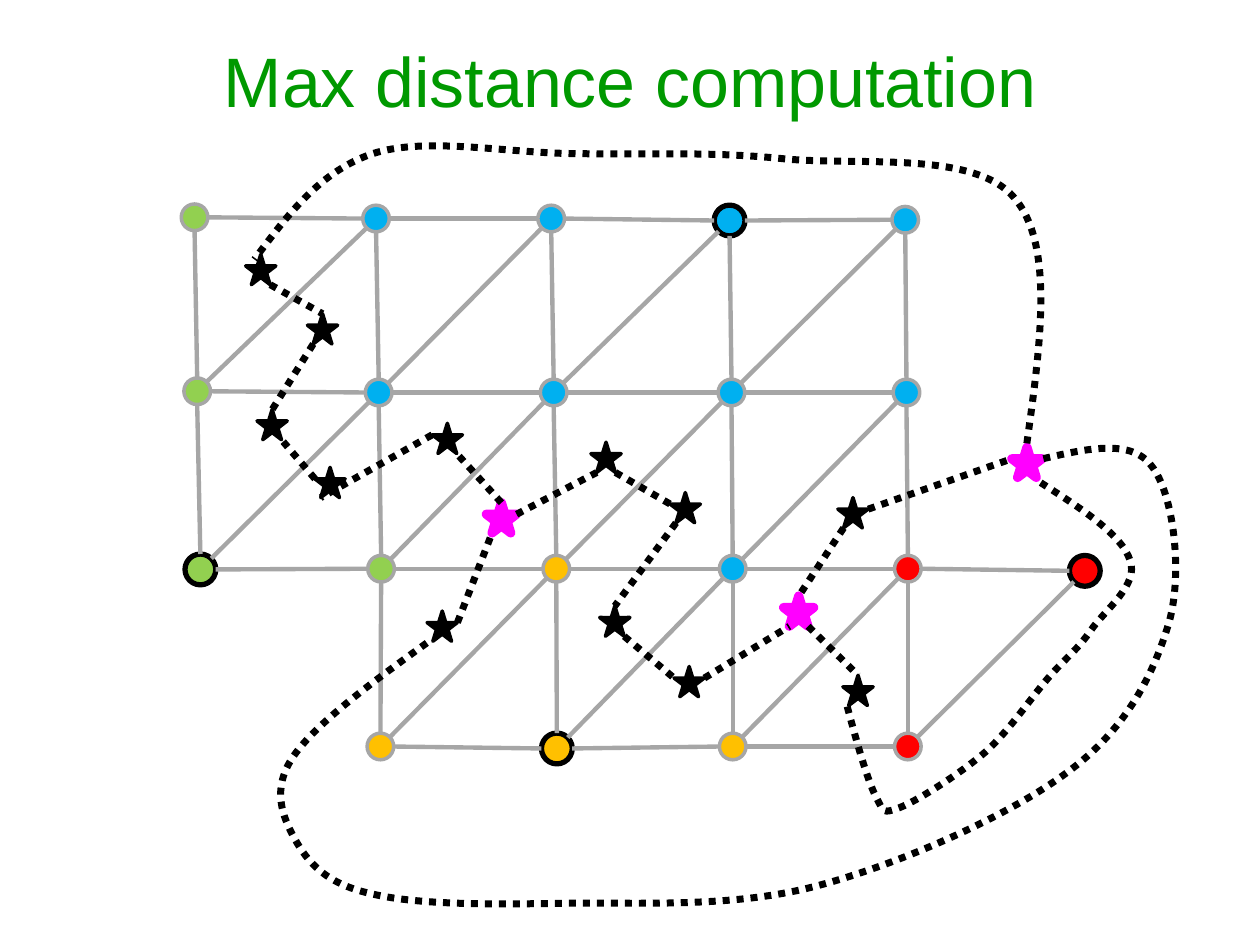
from lxml import etree
from pptx import Presentation
from pptx import util as u
from pptx.dml.color import RGBColor
from pptx.enum import dml, shapes, text
from pptx.oxml.ns import qn

BLACK = RGBColor(0x00, 0x00, 0x00)
GRAY = RGBColor(0xA6, 0xA6, 0xA6)
BLUE = RGBColor(0x00, 0xB0, 0xF0)
LIME = RGBColor(0x92, 0xD0, 0x50)
ORANGE = RGBColor(0xFF, 0xC0, 0x00)
RED = RGBColor(0xFF, 0x00, 0x00)
MAGENTA = RGBColor(0xFF, 0x00, 0xFF)
TITLE_GREEN = RGBColor(0x00, 0x99, 0x00)

STAR_SIZE = 17.3
NODE_RADIUS = 7.6
SEED_RADIUS = 8.8

# Mesh nodes by (row, column): centre x, centre y, colour
NODES = {
    (0, 0): (111.2, 124.2, LIME), (0, 1): (214.9, 124.9, BLUE),
    (0, 2): (315, 124.9, BLUE), (0, 3): (416.9, 126, BLUE),
    (0, 4): (517.3, 125.6, BLUE),
    (1, 0): (112.7, 223.6, LIME), (1, 1): (216.4, 224.3, BLUE),
    (1, 2): (316.4, 224.3, BLUE), (1, 3): (418, 224.3, BLUE),
    (1, 4): (518, 224.3, BLUE),
    (2, 0): (114.5, 325.4, LIME), (2, 1): (217.8, 325, LIME),
    (2, 2): (317.9, 325, ORANGE), (2, 3): (418.7, 325, BLUE),
    (2, 4): (518.8, 325, RED), (2, 5): (619.9, 326.2, RED),
    (3, 1): (217.4, 426.6, ORANGE), (3, 2): (318.2, 427.7, ORANGE),
    (3, 3): (418.7, 426.6, ORANGE), (3, 4): (518.8, 426.6, RED),
}
SEEDS = {(0, 3), (2, 0), (2, 5), (3, 2)}
# Neighbour step (row, column) and how far the edge end sits from the centre, in radii
STEPS = {(0, 1): 1, (1, 0): 1, (1, -1): 0.71}

# Dual vertices: left, top
STARS = {
    "a": (140.4, 145.4), "b": (175.7, 179.3), "c": (146.9, 234),
    "d": (180, 267.1), "e": (247, 241.9), "f": (244.1, 349.2),
    "g": (337.7, 252.7), "h": (383, 281.5), "i": (342.7, 346.3),
    "k": (385.2, 380.9), "l": (478.8, 284.4), "m": (481.7, 385.9),
    "west": (277.9, 287.3), "south": (447.8, 340.6), "east": (578.2, 255.6),
}
JUNCTIONS = {"west", "south", "east"}
# Star tips as fractions of the star's size
TIPS = {"top": (0.5, 0), "left": (0, 0.38), "right": (1, 0.38),
        "foot_l": (0.19, 1), "foot_r": (0.81, 1)}
LINKS = [
    ("a", "foot_r", "b", "top"), ("b", "foot_l", "c", "top"),
    ("d", "left", "c", "foot_r"), ("e", "left", "d", "foot_l"),
    ("west", "top", "e", "foot_r"), ("f", "right", "west", "foot_l"),
    ("west", "right", "g", "foot_l"), ("g", "foot_r", "h", "left"),
    ("h", "foot_l", "i", "top"), ("i", "foot_r", "k", "left"),
    ("k", "right", "south", "foot_l"), ("l", "foot_l", "south", "top"),
    ("south", "foot_r", "m", "top"), ("l", "right", "east", "left"),
]

# Outer loops: start point, then two control points and an end point per segment
LOOPS = [
    [(594.7, 275.8),
     (618.5, 290.9), (641.5, 306), (645.8, 320.4),
     (650.9, 334.1), (631.4, 348.5), (623.5, 360),
     (615.6, 371.5), (609.1, 375.8), (599, 387.4),
     (589, 398.9), (576.7, 417.6), (563, 429.8),
     (548.6, 442.1), (524.9, 457.2), (514.1, 461.5),
     (504, 465.1), (505.4, 464.4), (500.4, 455),
     (495.4, 445), (489.6, 424.1), (483.8, 402.5)],
    [(596.2, 262.1),
     (621.4, 256.3), (646.6, 250.6), (658.1, 266.4),
     (670.3, 281.5), (676.1, 326.2), (668.2, 355),
     (659.5, 384.5), (644.4, 416.2), (609.8, 441.4),
     (576, 466.6), (512.6, 494.6), (464.4, 506.9),
     (416.2, 519.1), (362.2, 515.5), (320.4, 516.2),
     (277.9, 517), (236.9, 517), (211, 510.5),
     (185.8, 504.7), (175.7, 492.5), (168.5, 479.5),
     (161.3, 466.6), (154.8, 450.7), (167.8, 432),
     (180.7, 413.3), (213.1, 389.5), (246.2, 365.8)],
    [(586.8, 253.4),
     (594.7, 196.6), (602.6, 139.7), (579.6, 113),
     (556.6, 85.7), (488.9, 95), (447.1, 90.7),
     (405.4, 86.4), (368.6, 88.6), (329.8, 87.8),
     (290.9, 87.8), (244.1, 77.8), (213.1, 87.8),
     (182.9, 97.9), (164.2, 123.1), (145.4, 148.3)],
]


def style_line(line, color, width, dotted=False):
    line.color.rgb = color
    line.width = u.Pt(width)
    if dotted:
        line.dash_style = dml.MSO_LINE.ROUND_DOT


def add_title(page, title):
    box = page.shapes.add_textbox(u.Pt(54), u.Pt(0.7), u.Pt(612), u.Pt(90))
    frame = box.text_frame
    frame.word_wrap = True
    frame.vertical_anchor = text.MSO_ANCHOR.MIDDLE
    frame.text = title
    para = frame.paragraphs[0]
    para.alignment = text.PP_ALIGN.CENTER
    font = para.runs[0].font
    font.name = "Arial"
    font.size = u.Pt(40)
    font.color.rgb = TITLE_GREEN


def add_marker(page, kind, left, top, size, fill, outline, width):
    marker = page.shapes.add_shape(kind, u.Pt(left), u.Pt(top), u.Pt(size), u.Pt(size))
    marker.shadow.inherit = False
    marker.fill.solid()
    marker.fill.fore_color.rgb = fill
    style_line(marker.line, outline, width)


def add_line(page, start, end, color, width, dotted=False):
    ends = [u.Pt(value) for value in (*start, *end)]
    line = page.shapes.add_connector(shapes.MSO_CONNECTOR.STRAIGHT, *ends)
    style_line(line.line, color, width, dotted)
    etree.SubElement(line.element.spPr, qn("a:effectLst"))


def add_loop(page, points):
    points = [(u.Pt(x), u.Pt(y)) for x, y in points]
    builder = page.shapes.build_freeform(*points[0])
    builder.add_line_segments(points[3::3], close=False)
    loop = builder.convert_to_shape()
    loop.shadow.inherit = False
    loop.fill.background()
    style_line(loop.line, BLACK, 4, dotted=True)
    # Bend each straight segment into a Bezier curve
    for index, segment in enumerate(loop.element.xpath(".//a:lnTo")):
        segment.tag = qn("a:cubicBezTo")
        controls = points[3 * index + 1:3 * index + 3]
        for place, (x, y) in enumerate(controls):
            point = etree.Element(qn("a:pt"), x=str(x - loop.left), y=str(y - loop.top))
            segment.insert(place, point)


def node_radius(key):
    return SEED_RADIUS if key in SEEDS else NODE_RADIUS


def add_mesh(page):
    for key, (x, y, color) in NODES.items():
        radius = node_radius(key)
        outline, width = (BLACK, 3) if key in SEEDS else (GRAY, 2)
        add_marker(page, shapes.MSO_SHAPE.OVAL, x - radius, y - radius,
                   2 * radius, color, outline, width)
    for key, (x, y, _) in NODES.items():
        for (down, right), reach in STEPS.items():
            other = (key[0] + down, key[1] + right)
            if other in NODES:
                end_x, end_y, _ = NODES[other]
                near, far = reach * node_radius(key), reach * node_radius(other)
                add_line(page, (x + right * near, y + down * near),
                         (end_x - right * far, end_y - down * far), GRAY, 2.5)


def star_tip(name, tip):
    return [edge + part * STAR_SIZE for edge, part in zip(STARS[name], TIPS[tip])]


def add_dual(page):
    for name, (left, top) in STARS.items():
        color, width = (MAGENTA, 5.25) if name in JUNCTIONS else (BLACK, 2)
        add_marker(page, shapes.MSO_SHAPE.STAR_5_POINT, left, top,
                   STAR_SIZE, color, color, width)
    for first, first_tip, second, second_tip in LINKS:
        add_line(page, star_tip(first, first_tip), star_tip(second, second_tip),
                 BLACK, 4, dotted=True)
    for points in LOOPS:
        add_loop(page, points)


def main():
    deck = Presentation()
    deck.slide_width, deck.slide_height = u.Pt(720), u.Pt(540)
    page = deck.slides.add_slide(deck.slide_layouts[6])
    add_title(page, "Max distance computation")
    add_mesh(page)
    add_dual(page)
    deck.save("out.pptx")


if __name__ == "__main__":
    main()
